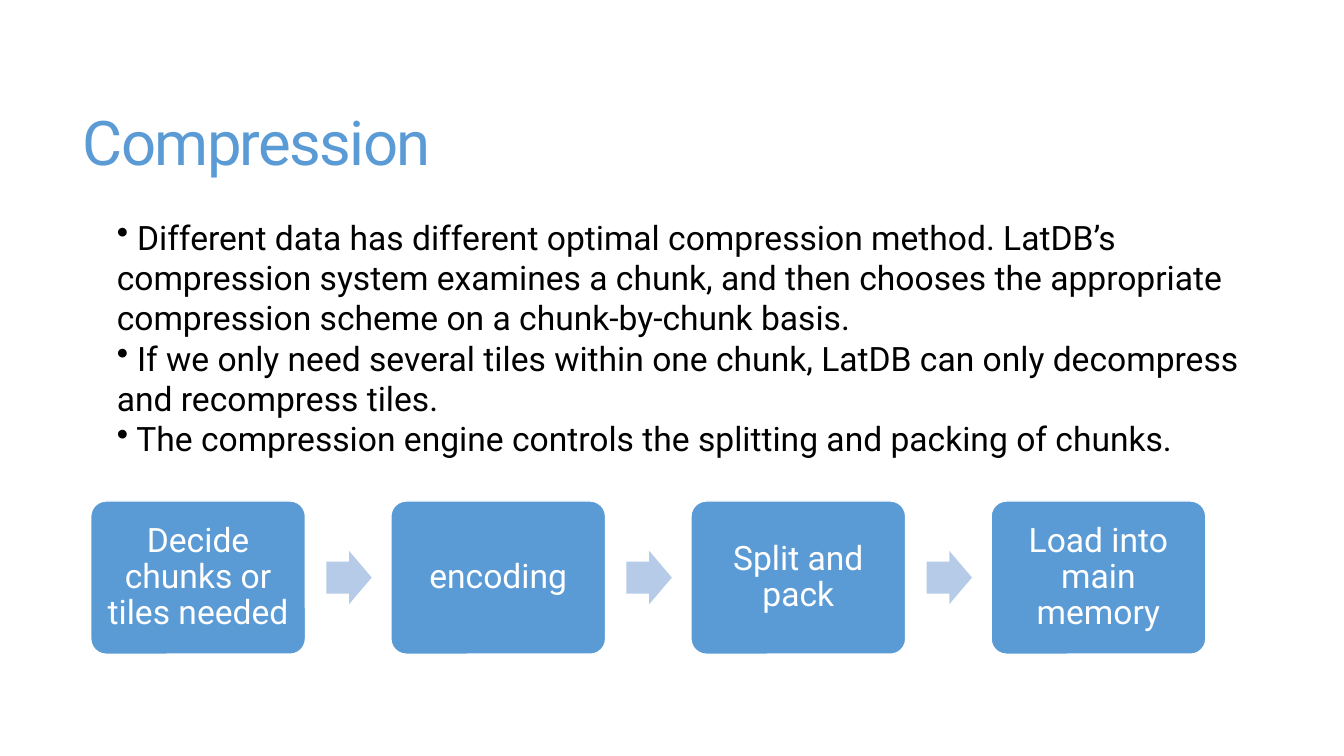
from lxml import etree
from pptx import Presentation
from pptx import util as u
from pptx.dml.color import RGBColor
from pptx.enum import shapes, text
from pptx.oxml.ns import qn

FACE = "Roboto"
BLUE, PALE, WHITE, BLACK = "5B9BD5", "B5CBE7", "FFFFFF", "000000"
HEAD = "Compression"
NOTES = [
    "Different data has different optimal compression method. LatDB’s compression "
    "system examines a chunk, and then chooses the appropriate compression scheme "
    "on a chunk-by-chunk basis.",
    "If we only need several tiles within one chunk, LatDB can only decompress "
    "and recompress tiles.",
    "The compression engine controls the splitting and packing of chunks.",
]
STEPS = ["Decide chunks or tiles needed", "encoding", "Split and pack",
         "Load into main memory"]


def color(code):
    return RGBColor.from_string(code)


def style(para, size, code):
    para.font.name = FACE
    para.font.size = u.Pt(size)
    para.font.color.rgb = color(code)


def add_title(slide, x, y, w, h):
    title = slide.shapes.title
    title.left, title.top, title.width, title.height = map(u.Inches, (x, y, w, h))
    frame = title.text_frame
    frame.text = HEAD
    frame.auto_size = text.MSO_AUTO_SIZE.NONE
    frame.vertical_anchor = text.MSO_ANCHOR.MIDDLE
    para = frame.paragraphs[0]
    para.alignment = text.PP_ALIGN.LEFT
    para.line_spacing = 0.85
    style(para, 44, BLUE)
    para.runs[0]._r.get_or_add_rPr().set("spc", "-120")


def add_notes(slide, x, y, w, h):
    box = slide.shapes.add_textbox(*map(u.Inches, (x, y, w, h)))
    frame = box.text_frame
    frame.word_wrap = True
    for i, note in enumerate(NOTES):
        para = frame.add_paragraph() if i else frame.paragraphs[0]
        para.text = " " + note
        style(para, 24, BLACK)
        props = para._p.get_or_add_pPr()
        bullet = etree.Element(qn("a:buChar"), char="•")
        props.insert_element_before(bullet, "a:tabLst", "a:defRPr", "a:extLst")


def add_block(slide, kind, x, y, w, h, fill, *adjust):
    block = slide.shapes.add_shape(kind, *map(u.Inches, (x, y, w, h)))
    block.shadow.inherit = False
    block.fill.solid()
    block.fill.fore_color.rgb = color(fill)
    block.line.fill.background()
    for i, value in enumerate(adjust):
        block.adjustments[i] = value
    return block


def add_step(slide, label, x, y, w, h):
    step = add_block(slide, shapes.MSO_SHAPE.ROUNDED_RECTANGLE, x, y, w, h, BLUE, 0.1)
    step.line.color.rgb = color(WHITE)
    step.line.width = u.Pt(1)
    frame = step.text_frame
    frame.word_wrap = True
    frame.vertical_anchor = text.MSO_ANCHOR.MIDDLE
    frame.margin_left = frame.margin_right = u.Inches(0.1)
    frame.margin_top = frame.margin_bottom = u.Inches(0.1)
    frame.text = label
    para = frame.paragraphs[0]
    para.alignment = text.PP_ALIGN.CENTER
    para.line_spacing = 0.9
    style(para, 24, WHITE)


def add_flow(slide, x, y, w, h):
    """Spread the steps evenly over the box, with an arrow in each gap."""
    wide, tip, tall = 2.13, 0.45, 0.53
    pitch = (w - wide) / (len(STEPS) - 1)
    for i, label in enumerate(STEPS):
        left = x + i * pitch
        if i:
            add_block(slide, shapes.MSO_SHAPE.RIGHT_ARROW, left - 0.64,
                      y + (h - tall) / 2, tip, tall, PALE, 0.6, 0.5)
        add_step(slide, label, left, y, wide, h)


def main():
    deck = Presentation()
    deck.slide_width, deck.slide_height = u.Inches(13.33), u.Inches(7.5)
    slide = deck.slides.add_slide(deck.slide_layouts[5])
    add_title(slide, 0.72, 0.55, 11.78, 1.81)
    add_flow(slide, 0.9, 4.97, 11.06, 1.52)
    add_notes(slide, 1.06, 2.1, 11.58, 2.52)
    deck.save("out.pptx")


if __name__ == "__main__":
    main()
